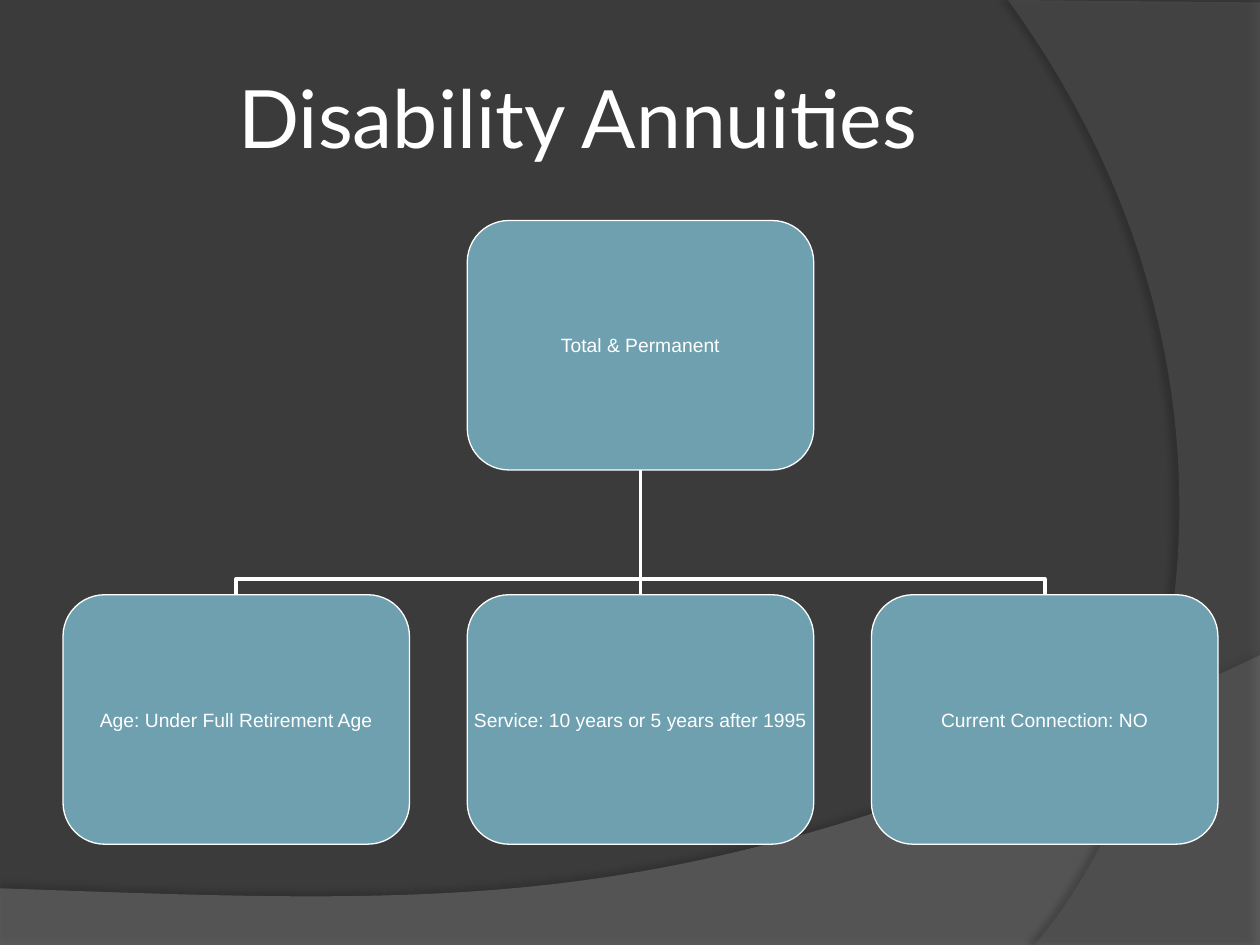
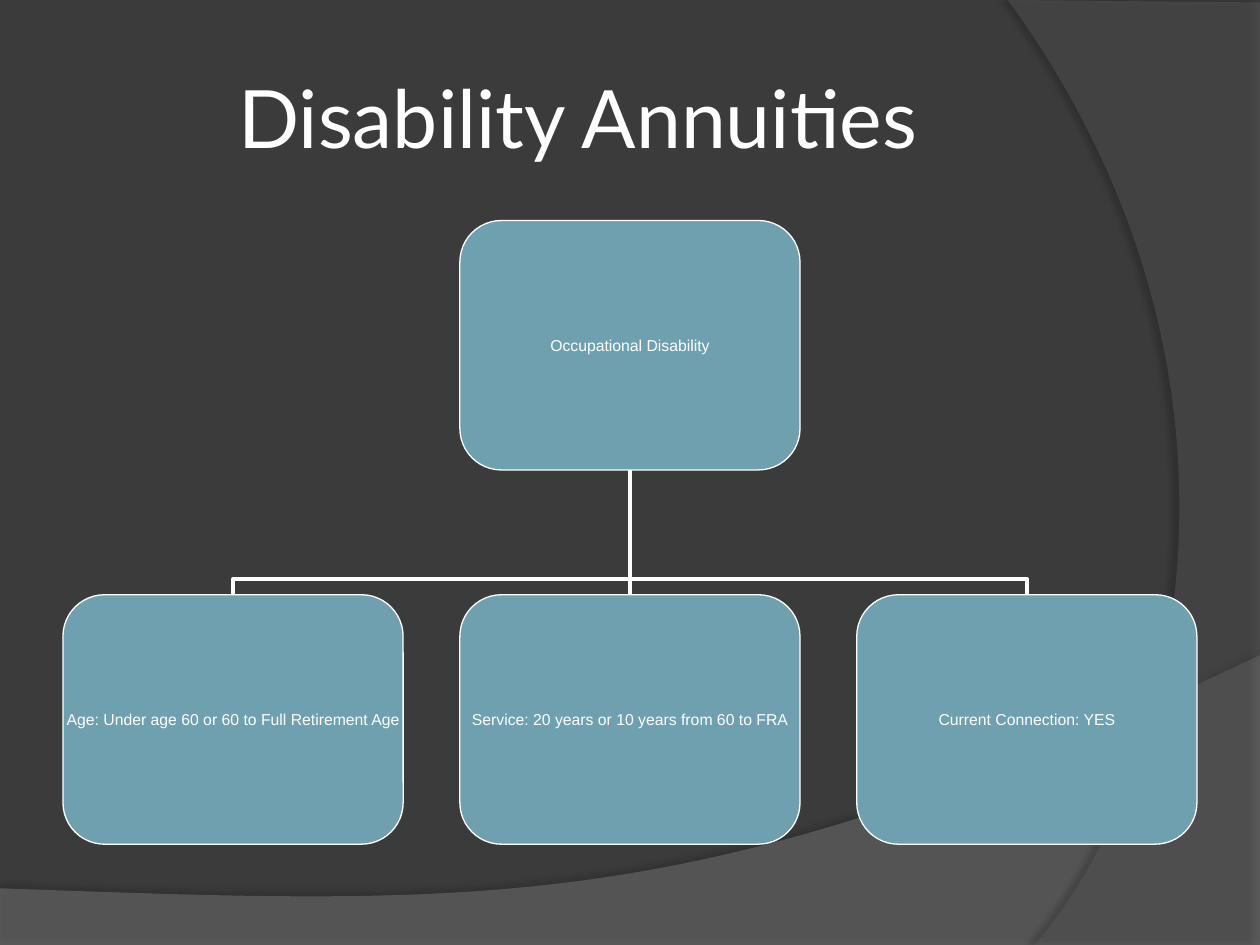
from lxml import etree
from pptx import Presentation
from pptx.dml.color import RGBColor
from pptx.enum.shapes import MSO_CONNECTOR, MSO_SHAPE
from pptx.enum.text import MSO_ANCHOR, MSO_AUTO_SIZE, PP_ALIGN
from pptx.oxml.ns import qn
from pptx.util import Inches, Pt

ROUNDED = MSO_SHAPE.ROUNDED_RECTANGLE
STRAIGHT, ELBOW = MSO_CONNECTOR.STRAIGHT, MSO_CONNECTOR.ELBOW
MIDDLE, CENTER = MSO_ANCHOR.MIDDLE, PP_ALIGN.CENTER
NO_FIT = MSO_AUTO_SIZE.NONE
TOP_SIDE, BOTTOM_SIDE = 0, 2

BACKGROUND, WHITE, BOX_BLUE = "3B3B3B", "FFFFFF", "6EA0B0"
LOWER_GRAY, RIGHT_GRAY, BLACK = "7F7F7F", "5E5E5E", "000000"
TITLE_FONT, BOX_FONT = "Lato", "Arial"

CHART_LEFT, PARENT_TOP, CHILD_TOP, BOX_HEIGHT = 0.5, 1.75, 4.72, 1.98
PITCH_RATIO = 7 / 6  # distance between box starts, in box widths
ELBOW_BEND = 0.127  # height of the crossbar, as a share of the rise

CHARTS = [
    ("Total & Permanent",
     ["Age: Under Full Retirement Age",
      "Service: 10 years or 5 years after 1995",
      "Current Connection: NO"], 2.75, 11),
    ("Occupational Disability",
     ["Age: Under age 60 or 60 to Full Retirement Age",
      "Service: 20 years or 10 years from 60 to FRA",
      "Current Connection: YES"], 2.7, 9),
]


def color(hex_string):
    return RGBColor.from_string(hex_string)


def fill_solid(fill, hex_string):
    fill.solid()
    fill.fore_color.rgb = color(hex_string)


def write_text(shape, text, *, font, size, inset=0, wrap=True):
    frame = shape.text_frame
    frame.word_wrap = wrap
    frame.auto_size = NO_FIT
    frame.vertical_anchor = MIDDLE
    frame.margin_left = frame.margin_right = Inches(inset)
    frame.margin_top = frame.margin_bottom = Inches(inset)
    para = frame.paragraphs[0]
    para.alignment = CENTER
    span = para.add_run()
    span.text = text
    span.font.name = font
    span.font.size = Pt(size)
    span.font.color.rgb = color(WHITE)


def curve(start, control_a, control_b, end, steps=60):
    """Return the points of a cubic Bezier curve, start and end included."""
    points = []
    for step in range(steps + 1):
        t = step / steps
        weights = ((1 - t) ** 3, 3 * t * (1 - t) ** 2, 3 * t * t * (1 - t), t ** 3)
        points.append(tuple(
            sum(weight * value for weight, value in zip(weights, values))
            for values in zip(start, control_a, control_b, end)))
    return points


def add_alpha(color_element, percent):
    etree.SubElement(color_element, qn("a:alpha"), val=str(percent * 1000))


def add_shadow(shape, *, opacity, blur, distance, angle):
    effects = etree.SubElement(shape.element.spPr, qn("a:effectLst"))
    shadow = etree.SubElement(
        effects, qn("a:outerShdw"), blurRad=str(Pt(blur)), dist=str(Pt(distance)),
        dir=str(angle * 60000), algn="ctr", rotWithShape="0")
    add_alpha(etree.SubElement(shadow, qn("a:srgbClr"), val=BLACK), opacity)


def add_band(page, points, hex_string, fill_opacity, **shadow):
    outline = [(Inches(x), Inches(y)) for x, y in points]
    builder = page.shapes.build_freeform(*outline[0], scale=1.0)
    builder.add_line_segments(outline[1:], close=True)
    band = builder.convert_to_shape()
    fill_solid(band.fill, hex_string)
    add_alpha(band.element.spPr.find(".//" + qn("a:srgbClr")), fill_opacity)
    band.line.fill.background()
    add_shadow(band, **shadow)
    return band


def decorate_master(deck, page):
    """Draw the bands on a page, then move them behind the master's placeholders."""
    master = deck.slide_master
    fill_solid(master.background.fill, BACKGROUND)
    lower_edge = curve((10, 5.2), (5.59, 7.29), (3.91, 7.19), (0, 7.05))
    right_edge = curve((8.21, 7.5), (9.35, 6.19), (10.18, 3), (8, 0))
    bands = [
        add_band(page, [(0, 7.51), (10, 7.51), *lower_edge], LOWER_GRAY, 45,
                 opacity=35, blur=4, distance=3.5, angle=270),
        add_band(page, [(10, 0.02), (10, 7.5), *right_edge], RIGHT_GRAY, 40,
                 opacity=45, blur=4, distance=4, angle=180),
    ]
    for position, band in enumerate(bands, start=2):
        master.shapes.element.insert(position, band.element)


def place_title(layout):
    title = next(shape for shape in layout.placeholders
                 if shape.placeholder_format.idx == 0)
    title.left, title.top = Inches(0.5), Inches(0.3)
    title.width, title.height = Inches(8.17), Inches(1.25)


def add_box(page, text, left, top, width, size):
    box = page.shapes.add_shape(ROUNDED, Inches(left), Inches(top),
                                Inches(width), Inches(BOX_HEIGHT))
    box.shadow.inherit = False
    fill_solid(box.fill, BOX_BLUE)
    box.line.color.rgb = color(WHITE)
    box.line.width = Pt(0.75)
    write_text(box, text, font=BOX_FONT, size=size, wrap=False)
    return box


def add_line(page, kind, start, end):
    line = page.shapes.add_connector(kind, *map(Inches, (*start, *end)))
    line.line.color.rgb = color(WHITE)
    line.line.width = Pt(2.25)
    etree.SubElement(line.element.spPr, qn("a:effectLst"))
    return line


def add_elbow(page, child_x, parent_x):
    """Join a child's top to the parent's bottom with a turned elbow line."""
    middle_x = (child_x + parent_x) / 2
    middle_y = (CHILD_TOP + PARENT_TOP + BOX_HEIGHT) / 2
    half_rise = (CHILD_TOP - PARENT_TOP - BOX_HEIGHT) / 2
    half_reach = abs(child_x - parent_x) / 2
    side, turn = (1, 90) if child_x > parent_x else (-1, 270)
    line = add_line(page, ELBOW,
                    (middle_x + side * half_rise, middle_y - half_reach),
                    (middle_x - side * half_rise, middle_y + half_reach))
    properties = line.element.spPr
    properties.find(qn("a:xfrm")).set("rot", str(turn * 60000))
    guides = properties.find(".//" + qn("a:avLst"))
    etree.SubElement(guides, qn("a:gd"), name="adj1",
                     fmla=f"val {round(ELBOW_BEND * 100000)}")


def add_hierarchy(page, parent_text, child_texts, width, size):
    lefts = [CHART_LEFT + index * width * PITCH_RATIO
             for index in range(len(child_texts))]
    centers = [left + width / 2 for left in lefts]
    left_x, parent_x, right_x = centers
    add_elbow(page, right_x, parent_x)
    stem = add_line(page, STRAIGHT, (parent_x, CHILD_TOP),
                    (parent_x, PARENT_TOP + BOX_HEIGHT))
    add_elbow(page, left_x, parent_x)
    parent = add_box(page, parent_text, lefts[1], PARENT_TOP, width, size)
    children = [add_box(page, text, left, CHILD_TOP, width, size)
                for text, left in zip(child_texts, lefts)]
    stem.begin_connect(children[1], TOP_SIDE)
    stem.end_connect(parent, BOTTOM_SIDE)


def main():
    deck = Presentation()
    deck.slide_width, deck.slide_height = Inches(10), Inches(7.5)
    layout = deck.slide_layouts.get_by_name("Title Only")
    place_title(layout)
    for chart in CHARTS:
        page = deck.slides.add_slide(layout)
        write_text(page.shapes.title, "Disability Annuities",
                   font=TITLE_FONT, size=46, inset=0.05)
        add_hierarchy(page, *chart)
    decorate_master(deck, deck.slides[0])
    deck.save("out.pptx")


if __name__ == "__main__":
    main()
